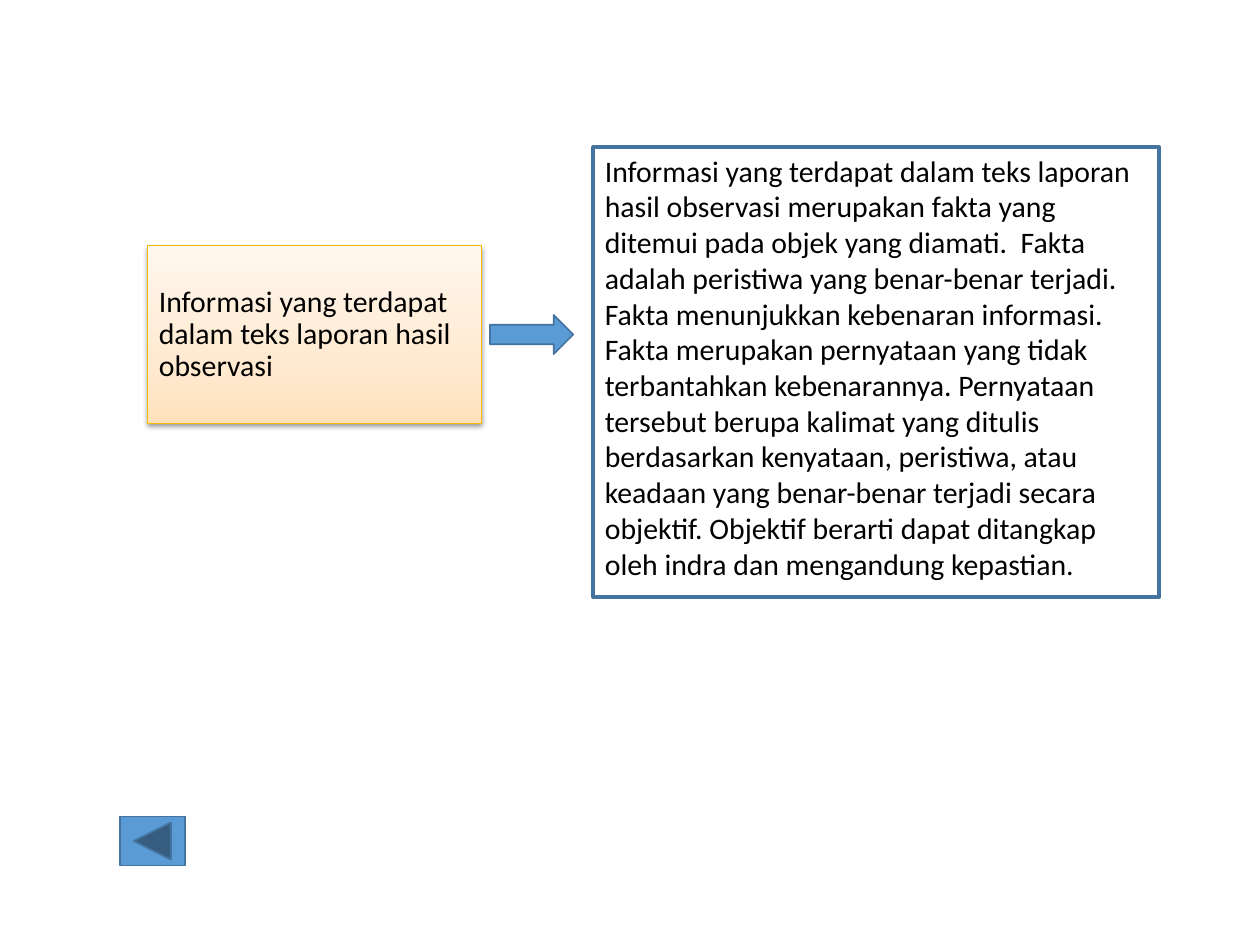
from copy import deepcopy

from lxml import etree
from pptx import Presentation, util as u
from pptx.dml.color import RGBColor
from pptx.enum import shapes, text
from pptx.oxml.ns import qn

COLS, ROWS = 10, 7.5
CELL = u.Inches(1)

BLACK = RGBColor(0x00, 0x00, 0x00)
BLUE = RGBColor(0x5B, 0x9B, 0xD5)
DARK_BLUE = RGBColor(0x43, 0x73, 0x9E)
GOLD = RGBColor(0xF9, 0xBC, 0x00)
CREAM = [
    (0, RGBColor(0xFF, 0xE2, 0xBD)),
    (0.35, RGBColor(0xFF, 0xEA, 0xD1)),
    (1, RGBColor(0xFF, 0xF7, 0xEE)),
]

TOPIC = "Informasi yang terdapat dalam teks laporan hasil observasi"
EXPLANATION = (
    "Informasi yang terdapat dalam teks laporan hasil observasi merupakan "
    "fakta yang ditemui pada objek yang diamati.  Fakta adalah peristiwa yang "
    "benar-benar terjadi. Fakta menunjukkan kebenaran informasi. Fakta "
    "merupakan pernyataan yang tidak terbantahkan kebenarannya. Pernyataan "
    "tersebut berupa kalimat yang ditulis berdasarkan kenyataan, peristiwa, "
    "atau keadaan yang benar-benar terjadi secara objektif. Objektif berarti "
    "dapat ditangkap oleh indra dan mengandung kepastian."
)


def add_box(s, kind, col, row, cols, rows, fill=None, line=DARK_BLUE, width=1):
    """Add a preset shape placed in grid cells; no fill colour leaves it clear."""
    sp = s.shapes.add_shape(kind, *(int(n * CELL) for n in (col, row, cols, rows)))
    sp.shadow.inherit = False
    if fill is None:
        sp.fill.background()
    else:
        sp.fill.solid()
        sp.fill.fore_color.rgb = fill
    sp.line.color.rgb = line
    sp.line.width = u.Pt(width)
    return sp


def write(sp, words, size=17, font="Calibri", color=BLACK, spacing=None,
          anchor=text.MSO_ANCHOR.TOP, fit=text.MSO_AUTO_SIZE.NONE):
    tf = sp.text_frame
    tf.word_wrap = True
    tf.auto_size = fit
    tf.vertical_anchor = anchor
    tf.margin_left = tf.margin_right = u.Inches(0.09)
    tf.margin_top = tf.margin_bottom = u.Inches(0.04)
    p = tf.paragraphs[0]
    p.alignment = text.PP_ALIGN.LEFT
    p.line_spacing = spacing
    r = p.add_run()
    r.text = words
    r.font.name = font
    r.font.size = u.Pt(size)
    r.font.color.rgb = color


def fill_upward(sp, stops):
    """Fill with a gradient that runs from the bottom to the top."""
    sp.fill.gradient()
    sp.fill.gradient_angle = 90
    gs_list = sp._element.spPr.find(".//" + qn("a:gsLst"))
    while len(gs_list) < len(stops):
        gs_list.append(deepcopy(gs_list[0]))
    for stop, (position, color) in zip(sp.fill.gradient_stops, stops):
        stop.position = position
        stop.color.rgb = color


def drop_shadow(sp, blur, distance, opacity):
    effects = sp._element.spPr.find(qn("a:effectLst"))
    shadow = etree.SubElement(
        effects, qn("a:outerShdw"), blurRad=str(u.Pt(blur)),
        dist=str(u.Pt(distance)), dir="5400000", rotWithShape="0")
    color = etree.SubElement(shadow, qn("a:srgbClr"), val="000000")
    etree.SubElement(color, qn("a:alpha"), val=str(opacity * 1000))


def main():
    prs = Presentation()
    prs.slide_width = COLS * CELL
    prs.slide_height = int(ROWS * CELL)
    s = prs.slides.add_slide(prs.slide_layouts[6])
    kinds = shapes.MSO_SHAPE

    topic = add_box(s, kinds.RECTANGLE, 1.17, 1.95, 2.65, 1.41, line=GOLD, width=0.5)
    fill_upward(topic, CREAM)
    drop_shadow(topic, blur=3.1, distance=1.6, opacity=38)
    write(topic, TOPIC, spacing=0.9, anchor=text.MSO_ANCHOR.MIDDLE)

    add_box(s, kinds.RIGHT_ARROW, 3.89, 2.5, 0.66, 0.31, fill=BLUE)

    explanation = add_box(s, kinds.RECTANGLE, 4.71, 1.17, 4.49, 3.57, width=2.25)
    write(explanation, EXPLANATION, fit=text.MSO_AUTO_SIZE.SHAPE_TO_FIT_TEXT)

    add_box(s, kinds.ACTION_BUTTON_BACK_OR_PREVIOUS, 0.95, 6.48, 0.52, 0.39, fill=BLUE)

    prs.save("out.pptx")


if __name__ == "__main__":
    main()
